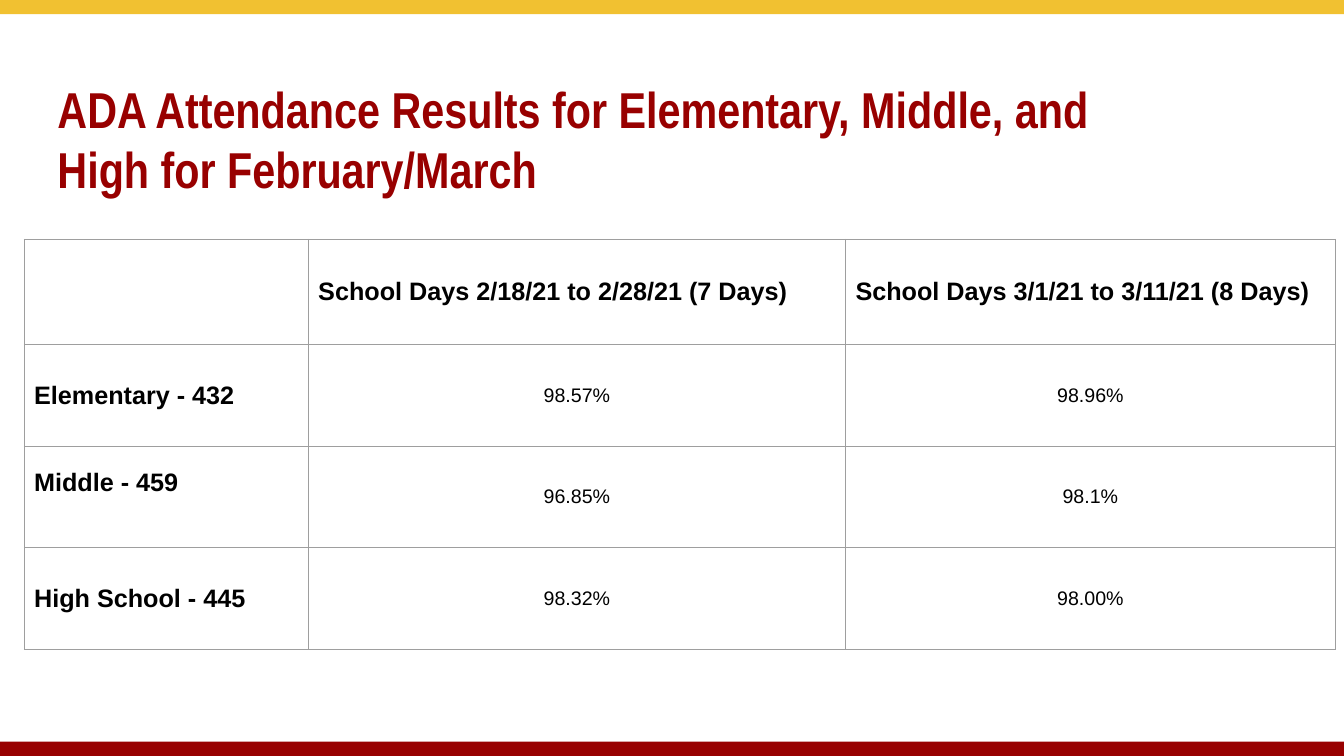
from lxml.etree import SubElement
from pptx import Presentation
from pptx.dml.color import RGBColor
from pptx.enum.shapes import MSO_SHAPE
from pptx.enum.text import MSO_ANCHOR, PP_ALIGN
from pptx.oxml.ns import qn
from pptx.util import Cm, Pt

WIDE, HIGH, BAND = 33.87, 19.05, 0.36
GOLD, RED, GREY, BLACK = "F1C131", "980000", "9E9E9E", "000000"
COLS = [7.16, 13.54, 12.34]
ROWS = [2.65, 2.56, 2.56, 2.56]
DATA = [
    [[], ["School Days 2/18/21 to 2/28/21 (", "7", " Days)"],
     ["School Days 3/1/21 to 3/11/21 (", "8 ", "Days)"]],
    [["Elementary - 432"], ["98.57%"], ["98.96%"]],
    [["Middle - 459"], ["96.85%"], ["98.1%"]],
    [["High School - 445"], ["98.32%"], ["98.00%"]],
]


def paint(color, value):
    color.rgb = RGBColor.from_string(value)


def add_run(para, text, font, size, color, bold):
    run = para.add_run()
    run.text = text
    run.font.name = font
    run.font.size = Pt(size)
    run.font.bold = bold
    paint(run.font.color, color)


def add_band(slide, top, color):
    band = slide.shapes.add_shape(
        MSO_SHAPE.RECTANGLE, 0, Cm(top), Cm(WIDE), Cm(BAND))
    band.shadow.inherit = False
    band.fill.solid()
    paint(band.fill.fore_color, color)
    band.line.fill.background()


def add_title(slide, text):
    box = slide.shapes.add_textbox(Cm(1.45), Cm(1.85), Cm(28.3), Cm(3.28))
    frame = box.text_frame
    frame.word_wrap = True
    frame.vertical_anchor = MSO_ANCHOR.MIDDLE
    frame.margin_left = frame.margin_right = 0
    frame.margin_top = frame.margin_bottom = 0
    add_run(frame.paragraphs[0], text, "Arial Narrow", 36, RED, True)


def add_edges(cell):
    props = cell._tc.get_or_add_tcPr()
    for spot, side in enumerate(("lnL", "lnR", "lnT", "lnB")):
        edge = props.makeelement(qn("a:" + side), {"w": str(Pt(0.75))})
        fill = SubElement(edge, qn("a:solidFill"))
        SubElement(fill, qn("a:srgbClr"), val=GREY)
        props.insert(spot, edge)


def fill_cell(cell, parts, head):
    cell.fill.background()
    cell.vertical_anchor = MSO_ANCHOR.MIDDLE
    cell.margin_left = cell.margin_right = Cm(0.25)
    cell.margin_top = cell.margin_bottom = Cm(0.25)
    add_edges(cell)
    para = cell.text_frame.paragraphs[0]
    para.alignment = PP_ALIGN.LEFT if head else PP_ALIGN.CENTER
    for part in parts:
        add_run(para, part, "Arial", 18 if head else 14, BLACK, head)


def add_grid(slide):
    table = slide.shapes.add_table(
        len(ROWS), len(COLS), Cm(0.61), Cm(6.03),
        Cm(sum(COLS)), Cm(sum(ROWS))).table
    table.first_row = table.horz_banding = False
    for col, width in zip(table.columns, COLS):
        col.width = Cm(width)
    for row, height in zip(table.rows, ROWS):
        row.height = Cm(height)
    for r, line in enumerate(DATA):
        for c, parts in enumerate(line):
            fill_cell(table.cell(r, c), parts, r == 0 or c == 0)
    table.cell(2, 0).margin_bottom = Cm(0.97)


def main():
    deck = Presentation()
    deck.slide_width, deck.slide_height = Cm(WIDE), Cm(HIGH)
    slide = deck.slides.add_slide(deck.slide_layouts[6])
    add_band(slide, 0, GOLD)
    add_band(slide, HIGH - BAND, RED)
    add_title(slide, "ADA Attendance Results for Elementary, Middle, "
                     "and High for February/March")
    add_grid(slide)
    deck.save("out.pptx")


if __name__ == "__main__":
    main()
